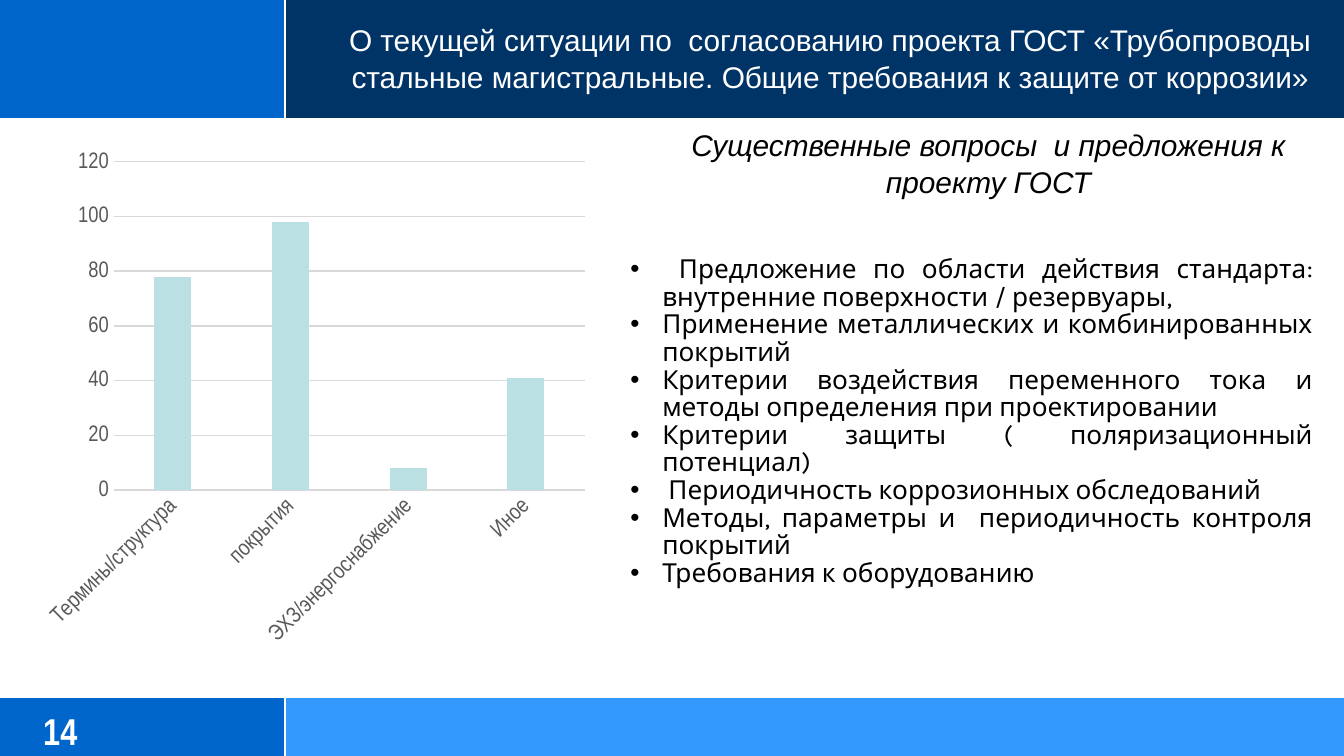
import pptx
import pptx.chart.data
import pptx.dml.color
import pptx.enum.chart
import pptx.enum.shapes
import pptx.enum.text
import pptx.oxml
import pptx.oxml.ns
import pptx.util
from lxml import etree

PX = 914400 / 134.4
WIDE, HIGH = 1344, 756
SPLIT, HEAD, FOOT = 285, 119, 697  # edges of the colour bands
INDENT = 32

COLORS = {
    "blue": "0066CC",
    "navy": "003366",
    "sky": "3399FF",
    "white": "FFFFFF",
    "black": "000000",
    "gray": "595959",
    "grid": "D9D9D9",
    "bar": "BBE0E3",
}

TITLE = ("О текущей ситуации по  согласованию проекта ГОСТ «Трубопроводы "
         "стальные магистральные. Общие требования к защите от коррозии»")
TOPIC = "Существенные вопросы  и предложения к проекту ГОСТ"
POINTS = [
    " Предложение по области действия стандарта: внутренние поверхности / резервуары,",
    "Применение металлических и комбинированных покрытий",
    "Критерии воздействия переменного тока и методы определения при проектировании",
    "Критерии защиты ( поляризационный потенциал)",
    " Периодичность коррозионных обследований",
    "Методы, параметры и  периодичность контроля покрытий",
    "Требования к оборудованию",
]
COUNTS = {
    "Термины/структура": 78,
    "покрытия": 98,
    "ЭХЗ/энергоснабжение": 8,
    "Иное": 41,
}
ALIGN = pptx.enum.text.PP_ALIGN


def px(*vals):
    return [round(val * PX) for val in vals]


def rgb(name):
    return pptx.dml.color.RGBColor.from_string(COLORS[name])


def set_font(font, face, size, color, bold=False, italic=False):
    font.name = face
    font.size = pptx.util.Pt(size)
    font.color.rgb = rgb(color)
    font.bold = bold
    font.italic = italic


def set_line(line, color, width):
    line.color.rgb = rgb(color)
    line.width = pptx.util.Pt(width)


def add_band(slide, box, color):
    band = slide.shapes.add_shape(pptx.enum.shapes.MSO_SHAPE.RECTANGLE, *px(*box))
    band.shadow.inherit = False
    band.fill.solid()
    band.fill.fore_color.rgb = rgb(color)
    band.line.fill.background()


def add_rule(slide, ends):
    rule = slide.shapes.add_connector(
        pptx.enum.shapes.MSO_CONNECTOR.STRAIGHT, *px(*ends))
    set_line(rule.line, "white", 1.25)
    etree.SubElement(rule.element.spPr, pptx.oxml.ns.qn("a:effectLst"))


def add_bullet(para):
    props = para._p.get_or_add_pPr()
    indent = px(INDENT)[0]
    props.set("marL", str(indent))
    props.set("indent", str(-indent))
    etree.SubElement(props, pptx.oxml.ns.qn("a:buFont"), typeface="Arial")
    etree.SubElement(props, pptx.oxml.ns.qn("a:buChar"), char="•")


def add_text(slide, box, lines, font, align, space=1.0, bullet=False):
    frame = slide.shapes.add_textbox(*px(*box)).text_frame
    frame.word_wrap = True
    for num, line in enumerate(lines):
        para = frame.add_paragraph() if num else frame.paragraphs[0]
        para.text = line
        if bullet:
            add_bullet(para)
        para.alignment = align
        para.line_spacing = space
        set_font(para.font, **font)


def style_axis(axis):
    axis.major_tick_mark = pptx.enum.chart.XL_TICK_MARK.NONE
    axis.minor_tick_mark = pptx.enum.chart.XL_TICK_MARK.NONE
    set_font(axis.tick_labels.font, "Arial Narrow", 12, "gray")


def add_bars(slide, box):
    data = pptx.chart.data.CategoryChartData()
    data.categories = list(COUNTS)
    data.add_series("Series 1", list(COUNTS.values()))
    kind = pptx.enum.chart.XL_CHART_TYPE.COLUMN_CLUSTERED
    chart = slide.shapes.add_chart(kind, *px(*box), data).chart
    chart.has_title = False
    chart.has_legend = False
    set_font(chart.font, "Arial Narrow", 10, "black")

    # Bars
    plot = chart.plots[0]
    plot.gap_width = 219
    plot.overlap = -27
    plot.vary_by_categories = False
    fill = plot.series[0].format.fill
    fill.solid()
    fill.fore_color.rgb = rgb("bar")

    # Axes, with slanted category names
    names, scale = chart.category_axis, chart.value_axis
    style_axis(names)
    style_axis(scale)
    set_line(names.format.line, "grid", 0.75)
    names._element.find(".//" + pptx.oxml.ns.qn("a:bodyPr")).set("rot", "-2700000")
    scale.minimum_scale, scale.maximum_scale, scale.major_unit = 0, 120, 20
    scale.format.line.fill.background()
    scale.has_major_gridlines = True
    set_line(scale.major_gridlines.format.line, "grid", 0.75)


def main():
    deck = pptx.Presentation()
    deck.slide_width, deck.slide_height = px(WIDE, HIGH)
    slide = deck.slides.add_slide(deck.slide_layouts[6])

    # Header and footer bands
    for top, end, color in ((FOOT, HIGH, "sky"), (0, HEAD, "navy")):
        add_band(slide, (0, top, SPLIT, end - top), "blue")
        add_band(slide, (SPLIT, top, WIDE - SPLIT, end - top), color)
        add_rule(slide, (SPLIT, top, SPLIT, end))
    for edge in (FOOT, HEAD):
        add_rule(slide, (0, edge, WIDE, edge))

    # Texts
    add_text(slide, (617, 250, 709, 361), POINTS,
             dict(face="Karla", size=14, color="black"),
             ALIGN.JUSTIFY, 0.88, bullet=True)
    add_text(slide, (649, 118, 679, 74), [TOPIC],
             dict(face="Arial", size=16, color="black", italic=True),
             ALIGN.CENTER, 1.05)
    add_text(slide, (317, 13, 1027, 74), [TITLE],
             dict(face="Arial", size=16, color="white"), ALIGN.CENTER, 1.05)

    # Chart and page number
    add_bars(slide, (36, 141, 560, 515))
    add_text(slide, (30, 702, 219, 52), ["14"],
             dict(face="Arial Narrow", size=20, color="white", bold=True),
             ALIGN.LEFT)

    deck.save("out.pptx")


if __name__ == "__main__":
    main()
